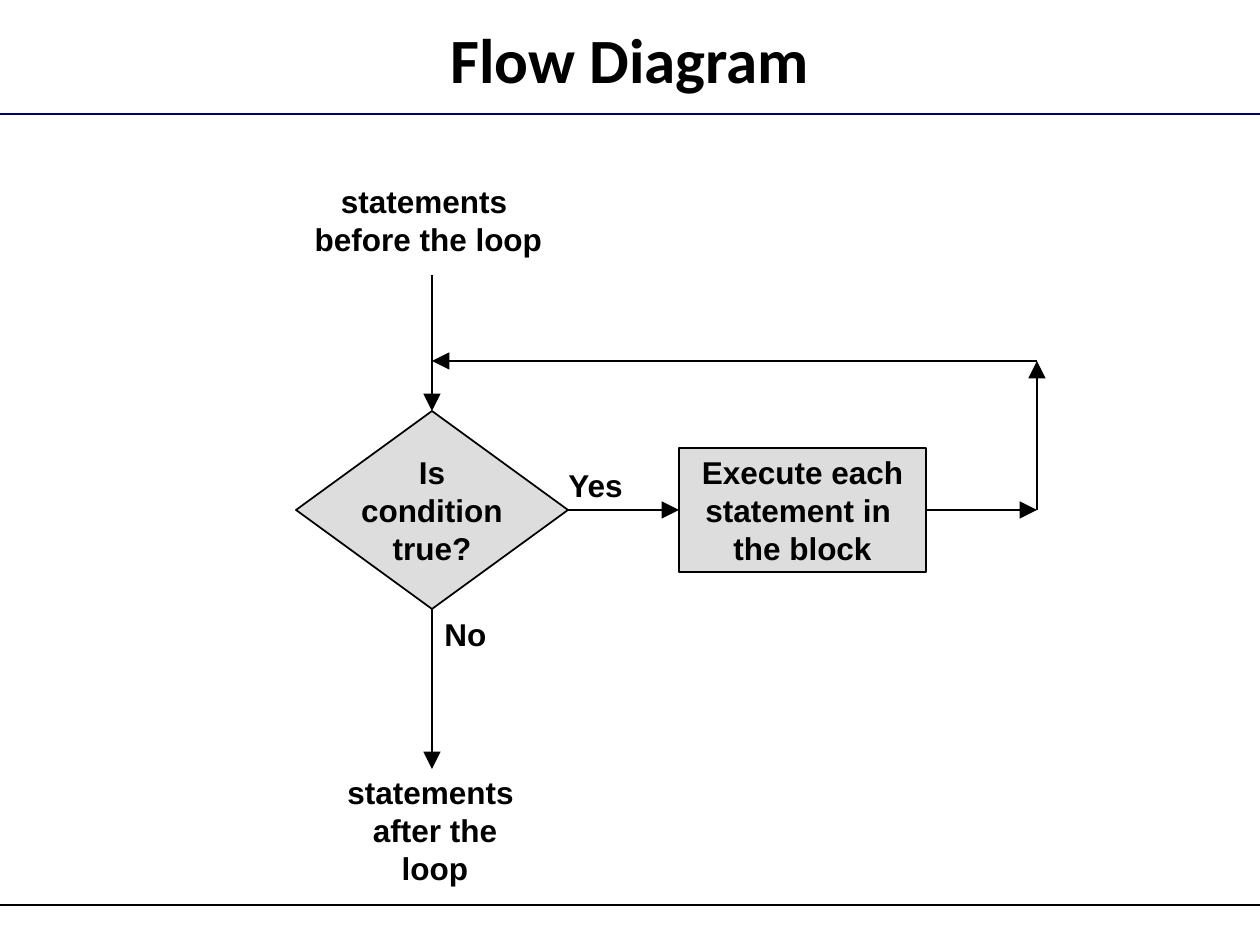
"""Build a slide with the flow diagram of a loop."""
from lxml.etree import SubElement
from pptx import Presentation
from pptx.dml.color import RGBColor
from pptx.enum.shapes import MSO_CONNECTOR, MSO_SHAPE
from pptx.enum.text import MSO_ANCHOR, PP_ALIGN
from pptx.oxml.ns import qn
from pptx.util import Pt

SCALE = 914400 / 126
WIDTH, HEIGHT = 1260, 945
BLACK = RGBColor(0x00, 0x00, 0x00)
NAVY = RGBColor(0x00, 0x00, 0x66)
GREY = RGBColor(0xDD, 0xDD, 0xDD)
WHITE = RGBColor(0xFF, 0xFF, 0xFF)

AXIS, MIDDLE, RETURN_X, RETURN_Y = 432, 510, 1037, 361
DIAMOND = (296, 411, 272, 198)
BLOCK = (679, 448, 247, 124)
DIAMOND_RIGHT = DIAMOND[0] + DIAMOND[2]
DIAMOND_BOTTOM = DIAMOND[1] + DIAMOND[3]
BLOCK_RIGHT = BLOCK[0] + BLOCK[2]

RULES = [(910, WHITE), (114, NAVY), (905, BLACK)]
NODES = [
    (MSO_SHAPE.RECTANGLE, BLOCK, "Execute each\vstatement in \vthe block", 0.75),
    (MSO_SHAPE.DIAMOND, DIAMOND, "Is\vcondition\ntrue?", 1),
]
ARROWS = [
    (AXIS, DIAMOND_BOTTOM, AXIS, 769),
    (DIAMOND_RIGHT, MIDDLE, BLOCK[0], MIDDLE),
    (RETURN_X, RETURN_Y, AXIS, RETURN_Y),
    (RETURN_X, MIDDLE, RETURN_X, RETURN_Y),
    (AXIS, 275, AXIS, DIAMOND[1]),
    (BLOCK_RIGHT, MIDDLE, RETURN_X, MIDDLE),
]
LABELS = [
    ((302, 176, 253, 88), "statements \vbefore the loop", PP_ALIGN.CENTER),
    ((323, 767, 224, 88), "statements \vafter the loop", PP_ALIGN.CENTER),
    ((AXIS, DIAMOND_BOTTOM, 67, 50), "No", PP_ALIGN.LEFT),
    ((556, 460, 82, 50), "Yes", PP_ALIGN.LEFT),
]


def emu(*lengths):
    return [round(length * SCALE) for length in lengths]


def write(shape, text, size=18, font="Arial", align=PP_ALIGN.CENTER,
          anchor=MSO_ANCHOR.MIDDLE, wrap=False):
    frame = shape.text_frame
    frame.text = text
    frame.word_wrap = wrap
    frame.vertical_anchor = anchor
    for para in frame.paragraphs:
        para.alignment = align
        for span in para.runs:
            span.font.size = Pt(size)
            span.font.name = font
            span.font.bold = True
            span.font.color.rgb = BLACK


def add_line(page, ends, color=BLACK, arrow=False):
    line = page.shapes.add_connector(MSO_CONNECTOR.STRAIGHT, *emu(*ends))
    line.line.color.rgb = color
    line.line.width = Pt(1)
    if arrow:
        SubElement(line.line._get_or_add_ln(), qn("a:tailEnd"),
                   type="triangle", w="lg", len="lg")
    SubElement(line._element.spPr, qn("a:effectLst"))


def add_node(page, kind, place, text, width):
    node = page.shapes.add_shape(kind, *emu(*place))
    node.shadow.inherit = False
    node.fill.solid()
    node.fill.fore_color.rgb = GREY
    node.line.color.rgb = BLACK
    node.line.width = Pt(width)
    write(node, text)


def main():
    deck = Presentation()
    deck.slide_width, deck.slide_height = emu(WIDTH, HEIGHT)
    page = deck.slides.add_slide(deck.slide_layouts[6])
    for y, color in RULES:
        add_line(page, (0, y, WIDTH, y), color)
    title = page.shapes.add_textbox(*emu(13, 15, 1234, 87))
    write(title, "Flow Diagram", size=36, font="Calibri", wrap=True)
    for node in NODES:
        add_node(page, *node)
    for ends in ARROWS:
        add_line(page, ends, arrow=True)
    for place, text, align in LABELS:
        box = page.shapes.add_textbox(*emu(*place))
        write(box, text, align=align, anchor=MSO_ANCHOR.TOP)
    deck.save("out.pptx")


if __name__ == "__main__":
    main()
